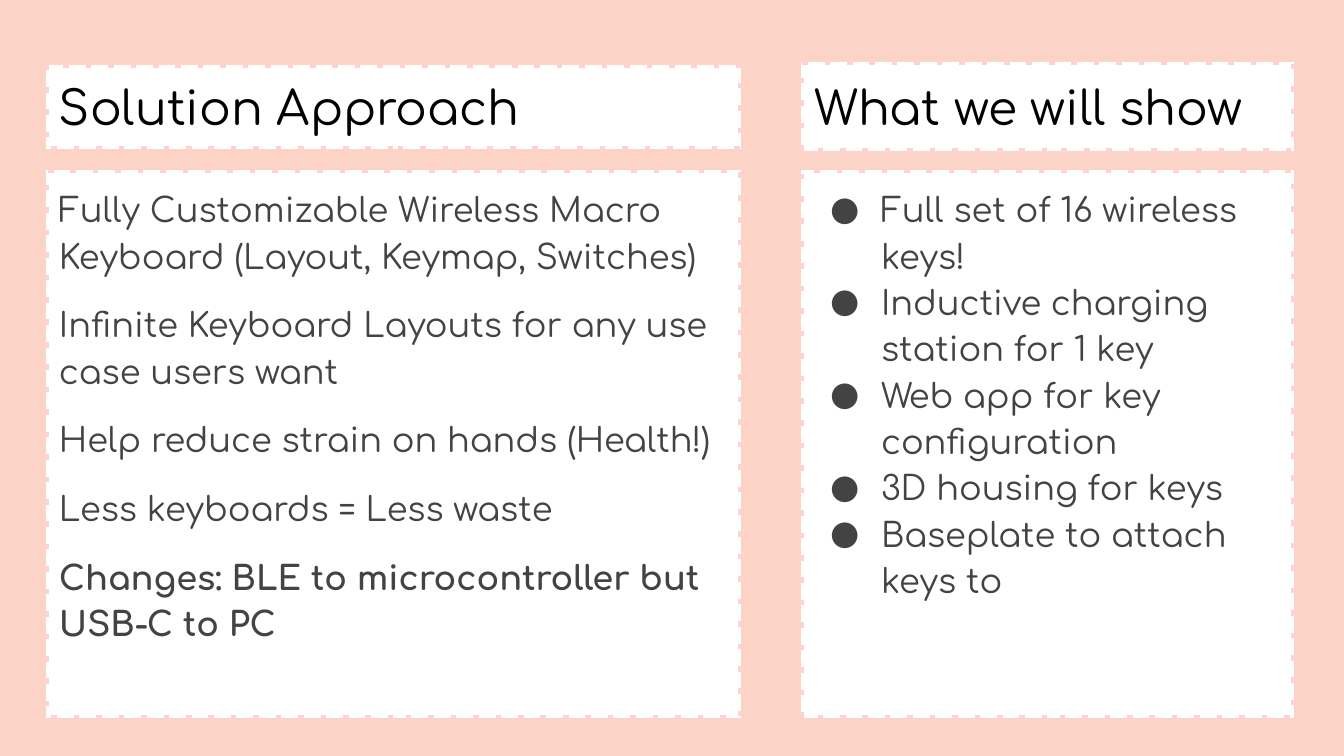
from lxml.etree import SubElement
from pptx import Presentation
from pptx.dml.color import RGBColor
from pptx.enum.shapes import MSO_SHAPE as Shape
from pptx.enum.text import MSO_ANCHOR as Anchor, PP_ALIGN as Align
from pptx.oxml.ns import qn
from pptx.util import Emu, Pt

PEACH = RGBColor(0xFB, 0xD3, 0xC7)
PINK = RGBColor(0xFF, 0xD2, 0xD2)
WHITE = RGBColor(0xFF, 0xFF, 0xFF)
BLACK = RGBColor(0, 0, 0)
GRAY = RGBColor(0x43, 0x43, 0x43)
FONT = "Comfortaa"

COLUMNS = [
    {
        "title": "Solution Approach",
        "left": 46, "width": 695, "title_top": 65, "title_height": 84,
        "bullets": False,
        "lines": [
            ("Fully Customizable Wireless Macro Keyboard (Layout, Keymap, Switches)", False),
            ("Infinite Keyboard Layouts for any use case users want", False),
            ("Help reduce strain on hands (Health!)", False),
            ("Less keyboards = Less waste", False),
            ("Changes: BLE to microcontroller but USB-C to PC", True),
        ],
    },
    {
        "title": "What we will show",
        "left": 801, "width": 493, "title_top": 62, "title_height": 89,
        "bullets": True,
        "lines": [
            ("Full set of 16 wireless keys!", False),
            ("Inductive charging station for 1 key", False),
            ("Web app for key configuration", False),
            ("3D housing for keys", False),
            ("Baseplate to attach keys to", False),
        ],
    },
]
BODY_TOP, BODY_HEIGHT = 170, 548
INSET = 13


def px(count):
    return Emu(round(count * 914400 / 134.4))


def add_panel(page, left, top, width, height, anchor):
    box = page.shapes.add_shape(Shape.RECTANGLE, px(left), px(top), px(width), px(height))
    box.shadow.inherit = False
    box.fill.solid()
    box.fill.fore_color.rgb = WHITE
    box.line.color.rgb = PINK
    box.line.width = Pt(3)
    SubElement(box.element.spPr.find(qn("a:ln")), qn("a:prstDash"), val="dot")
    frame = box.text_frame
    frame.word_wrap = True
    frame.vertical_anchor = anchor
    frame.margin_left = frame.margin_right = px(INSET)
    frame.margin_top = frame.margin_bottom = px(INSET)
    return frame


def add_span(para, text, size, color, bold=False):
    para.alignment = Align.LEFT
    span = para.add_run()
    span.text = text
    span.font.name = FONT
    span.font.size = Pt(size)
    span.font.color.rgb = color
    span.font.bold = bold


def add_bullet(para):
    props = para._p.get_or_add_pPr()
    props.set("marL", str(px(67)))
    props.set("indent", str(-px(51)))
    color = SubElement(props, qn("a:buClr"))
    SubElement(color, qn("a:srgbClr"), val=str(GRAY))
    SubElement(props, qn("a:buSzPts"), val="1800")
    SubElement(props, qn("a:buFont"), typeface=FONT)
    SubElement(props, qn("a:buChar"), char="●")


def add_column(page, column):
    left, width = column["left"], column["width"]
    title = add_panel(page, left, column["title_top"], width, column["title_height"], Anchor.MIDDLE)
    add_span(title.paragraphs[0], column["title"], 25.2, BLACK)

    body = add_panel(page, left, BODY_TOP, width, BODY_HEIGHT, Anchor.TOP)
    for index, (text, bold) in enumerate(column["lines"]):
        para = body.add_paragraph() if index else body.paragraphs[0]
        para.line_spacing = 1.15
        para.space_before = Pt(12 if index and not column["bullets"] else 0)
        add_span(para, text, 18, GRAY, bold)
        if column["bullets"]:
            add_bullet(para)


def main():
    deck = Presentation()
    deck.slide_width, deck.slide_height = px(1344), px(756)
    page = deck.slides.add_slide(deck.slide_layouts[6])
    page.background.fill.solid()
    page.background.fill.fore_color.rgb = PEACH
    for column in COLUMNS:
        add_column(page, column)
    deck.save("out.pptx")


if __name__ == "__main__":
    main()
